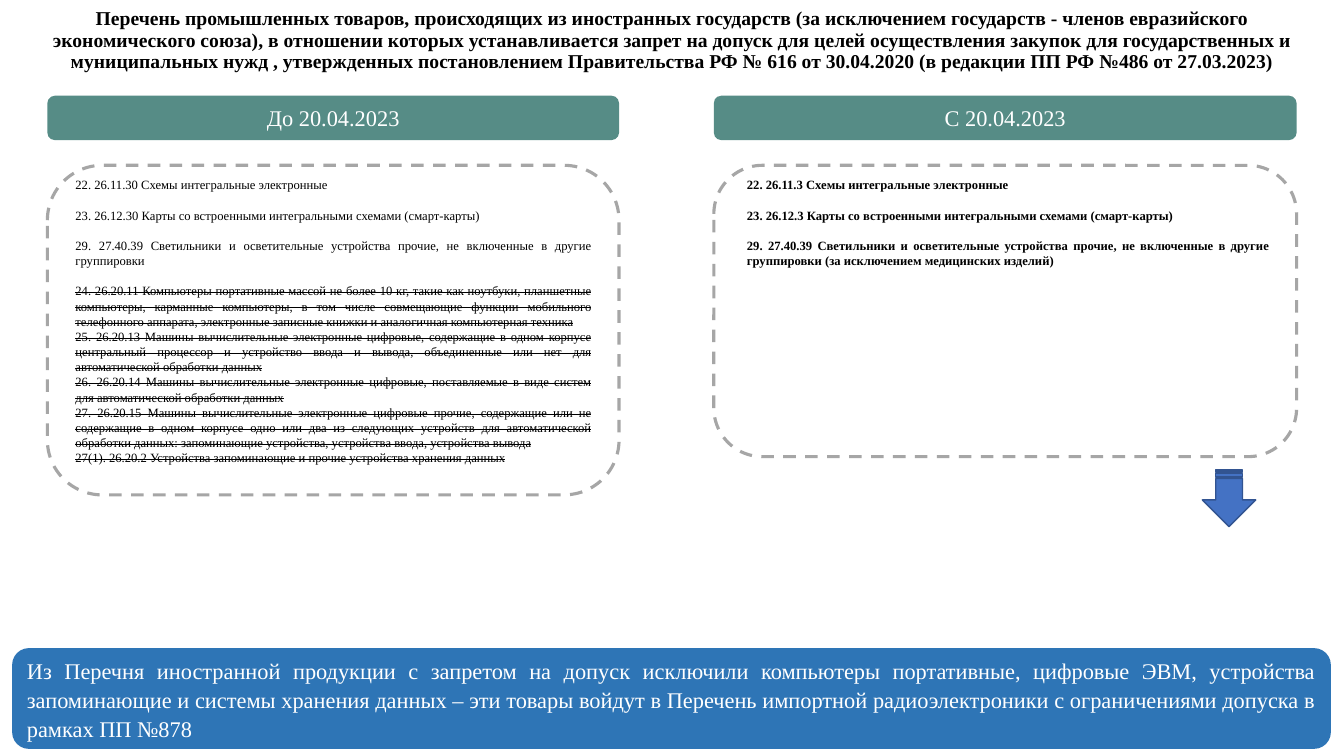
from pptx import Presentation
from pptx.dml.color import RGBColor
from pptx.enum import dml, shapes, text
from pptx.util import Inches, Pt

FONT = "Times New Roman"
BLACK = RGBColor(0x00, 0x00, 0x00)
WHITE = RGBColor(0xFF, 0xFF, 0xFF)
TEAL = RGBColor(0x56, 0x8C, 0x86)
BLUE = RGBColor(0x2E, 0x75, 0xB6)
ARROW_BLUE = RGBColor(0x44, 0x72, 0xC4)
ARROW_EDGE = RGBColor(0x32, 0x54, 0x91)
GREY = RGBColor(0xA6, 0xA6, 0xA6)

TITLE = (
    "Перечень промышленных товаров, происходящих из иностранных государств "
    "(за исключением государств - членов евразийского экономического союза), "
    "в отношении которых устанавливается запрет на допуск для целей осуществления "
    "закупок для государственных и муниципальных нужд , утвержденных постановлением "
    "Правительства РФ № 616 от 30.04.2020 (в редакции ПП РФ №486 от 27.03.2023)"
)
KEPT_BEFORE = [
    "22. 26.11.30 Схемы интегральные электронные",
    "23. 26.12.30 Карты со встроенными интегральными схемами (смарт-карты)",
    "29. 27.40.39 Светильники и осветительные устройства прочие, не включенные "
    "в другие группировки",
]
EXCLUDED = [
    "24. 26.20.11 Компьютеры портативные массой не более 10 кг, такие как ноутбуки, "
    "планшетные компьютеры, карманные компьютеры, в том числе совмещающие функции "
    "мобильного телефонного аппарата, электронные записные книжки и аналогичная "
    "компьютерная техника",
    "25. 26.20.13 Машины вычислительные электронные цифровые, содержащие в одном "
    "корпусе центральный процессор и устройство ввода и вывода, объединенные или нет "
    "для автоматической обработки данных",
    "26. 26.20.14 Машины вычислительные электронные цифровые, поставляемые в виде "
    "систем для автоматической обработки данных",
    "27. 26.20.15 Машины вычислительные электронные цифровые прочие, содержащие или "
    "не содержащие в одном корпусе одно или два из следующих устройств для "
    "автоматической обработки данных: запоминающие устройства, устройства ввода, "
    "устройства вывода",
    "27(1). 26.20.2 Устройства запоминающие и прочие устройства хранения данных",
]
KEPT_AFTER = [
    "22. 26.11.3 Схемы интегральные электронные",
    "23. 26.12.3 Карты со встроенными интегральными схемами (смарт-карты)",
    "29. 27.40.39 Светильники и осветительные устройства прочие, не включенные "
    "в другие группировки (за исключением медицинских изделий)",
]
CONCLUSION = (
    "Из Перечня иностранной продукции с запретом на допуск исключили компьютеры "
    "портативные, цифровые ЭВМ, устройства запоминающие и системы хранения данных – "
    "эти товары войдут в Перечень импортной радиоэлектроники с ограничениями допуска "
    "в рамках ПП №878"
)


def write(paragraph, wording, size, color, align, bold=False, struck=False):
    paragraph.text = wording
    paragraph.alignment = align
    font = paragraph.runs[0].font
    font.name, font.size, font.bold = FONT, Pt(size), bold
    font.color.rgb = color
    if struck:
        font._element.set("strike", "sngStrike")


def add_panel(slide, kind, left, top, width, height, fill=None):
    panel = slide.shapes.add_shape(
        kind, Inches(left), Inches(top), Inches(width), Inches(height))
    panel.shadow.inherit = False
    if fill is None:
        panel.fill.background()
    else:
        panel.fill.solid()
        panel.fill.fore_color.rgb = fill
    panel.line.fill.background()
    return panel


def add_banner(slide, left, top, width, height, fill, wording, align, spacing=1.0):
    banner = add_panel(slide, shapes.MSO_SHAPE.ROUNDED_RECTANGLE,
                       left, top, width, height, fill)
    frame = banner.text_frame
    frame.word_wrap = True
    frame.vertical_anchor = text.MSO_ANCHOR.MIDDLE
    write(frame.paragraphs[0], wording, 16, WHITE, align)
    frame.paragraphs[0].line_spacing = spacing


def add_title(slide, left, top, width, height):
    title = slide.shapes.title
    title.left, title.top = Inches(left), Inches(top)
    title.width, title.height = Inches(width), Inches(height)
    frame = title.text_frame
    frame.word_wrap = True
    frame.auto_size = text.MSO_AUTO_SIZE.NONE
    frame.vertical_anchor = text.MSO_ANCHOR.BOTTOM
    write(frame.paragraphs[0], TITLE, 14, BLACK, text.PP_ALIGN.CENTER, bold=True)
    frame.paragraphs[0].line_spacing = 0.9


def add_column(slide, left, top, width, frame_height, heading, list_box,
               kept, excluded=(), bold=False):
    """Heading, dashed frame and list; list_box is (inset, width, height)."""
    add_banner(slide, left, top, width, 0.44, TEAL, heading, text.PP_ALIGN.CENTER)

    # Dashed frame
    border = add_panel(slide, shapes.MSO_SHAPE.ROUNDED_RECTANGLE,
                       left, top + 0.69, width, frame_height)
    border.line.color.rgb = GREY
    border.line.width = Pt(2.25)
    border.line.dash_style = dml.MSO_LINE.DASH

    # Goods: kept items stand apart, excluded ones are struck through
    inset, list_width, list_height = list_box
    goods = slide.shapes.add_textbox(
        Inches(left + inset), Inches(top + 0.76),
        Inches(list_width), Inches(list_height)).text_frame
    goods.word_wrap = True
    goods.auto_size = text.MSO_AUTO_SIZE.SHAPE_TO_FIT_TEXT
    for index, item in enumerate([*kept, *excluded]):
        paragraph = goods.add_paragraph() if index else goods.paragraphs[0]
        struck = index >= len(kept)
        write(paragraph, item, 9, BLACK, text.PP_ALIGN.JUSTIFY, bold, struck)
        if 0 < index <= len(kept):
            paragraph.space_before = Pt(10.8)


def add_down_arrow(slide, left, top, width, height):
    arrow = add_panel(slide, shapes.MSO_SHAPE.STRIPED_RIGHT_ARROW,
                      left, top, width, height, ARROW_BLUE)
    arrow.rotation = 90
    arrow.line.color.rgb = ARROW_EDGE
    arrow.line.width = Pt(1)


def main():
    deck = Presentation()
    deck.slide_width, deck.slide_height = Inches(13.33), Inches(7.5)
    slide = deck.slides.add_slide(deck.slide_layouts.get_by_name("Title Only"))

    add_title(slide, 0.19, 0.01, 12.96, 0.76)
    add_column(slide, 0.47, 0.95, 5.67, 3.27, "До 20.04.2023",
               (0.18, 5.31, 3.13), KEPT_BEFORE, EXCLUDED)
    add_column(slide, 7.08, 0.95, 5.78, 2.89, "С 20.04.2023",
               (0.23, 5.37, 1.01), KEPT_AFTER, bold=True)
    add_down_arrow(slide, 11.91, 4.68, 0.56, 0.53)
    add_banner(slide, 0.12, 6.43, 13.08, 1, BLUE, CONCLUSION,
               text.PP_ALIGN.JUSTIFY, spacing=1.07)

    deck.save("out.pptx")


if __name__ == "__main__":
    main()
